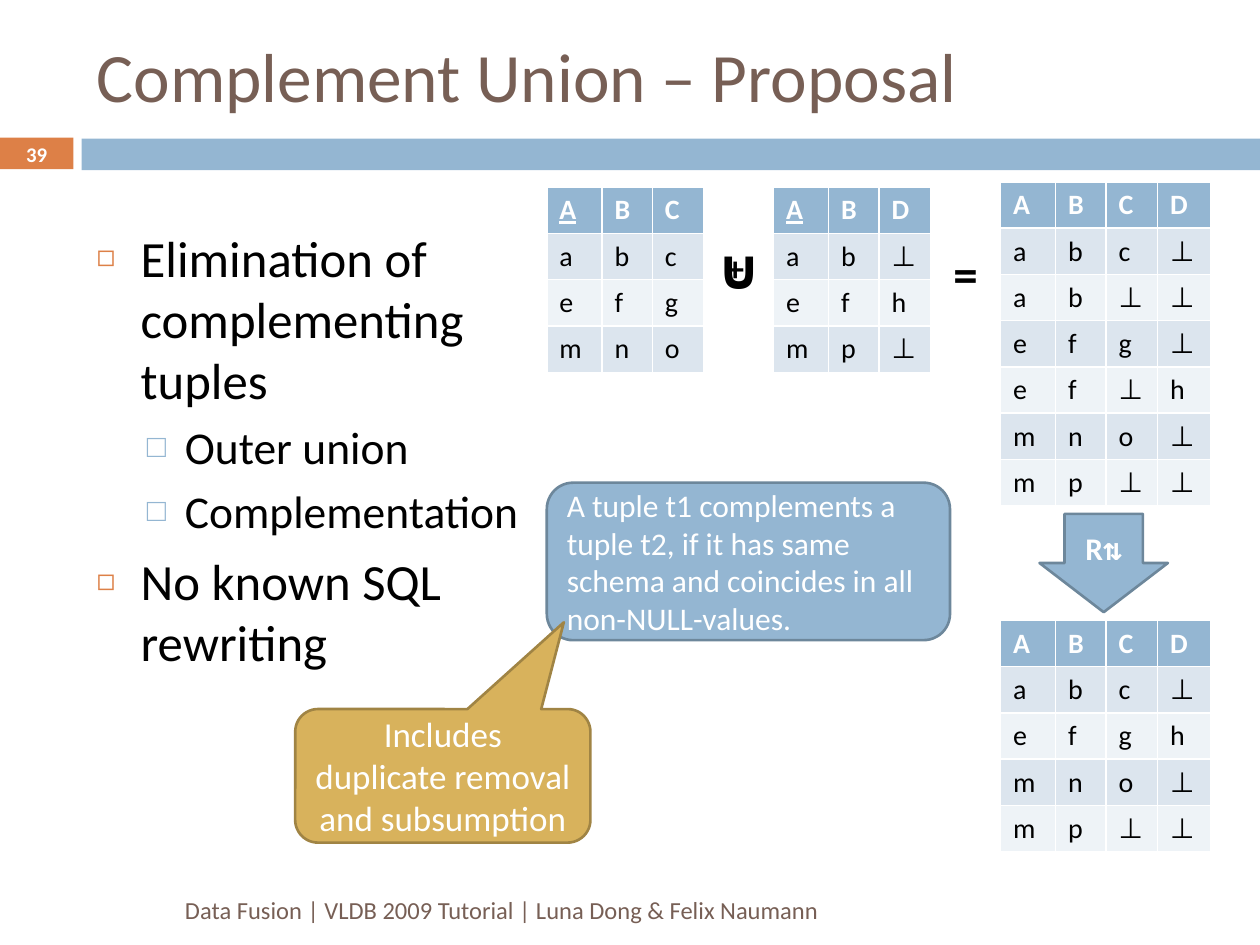
from dataclasses import dataclass

from lxml import etree
from pptx import Presentation
from pptx.dml.color import RGBColor
from pptx.enum.shapes import MSO_SHAPE
from pptx.enum.text import MSO_ANCHOR, MSO_AUTO_SIZE, PP_ALIGN
from pptx.oxml.ns import qn
from pptx.util import Pt

RECT, ROUND = MSO_SHAPE.RECTANGLE, MSO_SHAPE.ROUNDED_RECTANGLE
ARROW, BUBBLE = MSO_SHAPE.DOWN_ARROW, MSO_SHAPE.ROUNDED_RECTANGULAR_CALLOUT
LEFT, MID, RIGHT = PP_ALIGN.LEFT, PP_ALIGN.CENTER, PP_ALIGN.RIGHT
TOP, CENTER = MSO_ANCHOR.TOP, MSO_ANCHOR.MIDDLE
NO_FIT = MSO_AUTO_SIZE.NONE


@dataclass(frozen=True)
class Theme:
    font: str = "Calibri"
    mono: str = "Courier New"
    # Colours
    brown: str = "775F55"
    orange: str = "DD8047"
    blue: str = "94B6D2"
    navy: str = "6D879B"
    gold: str = "D8B25C"
    bronze: str = "A08444"
    bands: tuple = ("DCE5EE", "EEF3F7")
    white: str = "FFFFFF"
    black: str = "000000"
    # Type sizes
    title: float = 39.6
    list: tuple = (29, 26)
    union: float = 32
    equal: float = 28
    plus: float = 20
    call: float = 20
    note: float = 18
    cell: float = 16
    foot: float = 14
    page: float = 11.9


THEME = Theme()


def write(par, text, font=THEME.font, size=THEME.cell, color=THEME.black,
          bold=False, line=False, align=LEFT):
    """Add one styled run to a paragraph."""
    par.alignment = align
    run = par.add_run()
    run.text = text
    face = run.font
    face.name, face.size, face.bold, face.underline = font, Pt(size), bold, line
    face.color.rgb = RGBColor.from_string(color)


def paint(fill, color):
    fill.solid()
    fill.fore_color.rgb = RGBColor.from_string(color)


def place(shape, box):
    shape.left, shape.top, shape.width, shape.height = map(Pt, box)


class Page:
    def __init__(self, slide, theme):
        self.slide, self.theme = slide, theme
        self.shapes = slide.shapes

    def title(self, box, text):
        shape = self.shapes.title
        place(shape, box)
        shape.text_frame.auto_size = NO_FIT
        shape.text_frame.vertical_anchor = CENTER
        write(shape.text_frame.paragraphs[0], text,
              size=self.theme.title, color=self.theme.brown)

    def list(self, box, items):
        look = self.theme
        # Per level: mark, colour, mark size, indent, hang, space before
        kinds = (("◻", look.orange, 60, 25.2, 25.2, 7),
                 ("□", look.blue, 70, 50.4, 21.6, 5.5))
        shape = self.slide.placeholders[1]
        place(shape, box)
        frame = shape.text_frame
        frame.auto_size = NO_FIT
        for i, (level, text) in enumerate(items):
            par = frame.add_paragraph() if i else frame.paragraphs[0]
            mark, color, scale, left, hang, gap = kinds[level]
            par.level, par.space_before = level, Pt(gap)
            write(par, text, size=look.list[level])
            props = par._p.get_or_add_pPr()
            props.set("marL", str(Pt(left)))
            props.set("indent", str(-Pt(hang)))
            tint = etree.SubElement(props, qn("a:buClr"))
            etree.SubElement(tint, qn("a:srgbClr"), val=color)
            etree.SubElement(props, qn("a:buSzPct"), val=str(scale * 1000))
            etree.SubElement(props, qn("a:buChar"), char=mark)

    def label(self, box, text, home=None, wrap=False, anchor=TOP, **form):
        shape = (home or self.shapes).add_textbox(*map(Pt, box))
        frame = shape.text_frame
        frame.word_wrap, frame.vertical_anchor = wrap, anchor
        write(frame.paragraphs[0], text, **form)

    def shape(self, kind, box, fill, edge=None, adjust=()):
        shape = self.shapes.add_shape(kind, *map(Pt, box))
        shape.shadow.inherit = False
        paint(shape.fill, fill)
        if edge:
            shape.line.color.rgb = RGBColor.from_string(edge)
            shape.line.width = Pt(1.5)
        else:
            shape.line.fill.background()
        for i, value in enumerate(adjust):
            shape.adjustments[i] = value
        frame = shape.text_frame
        frame.word_wrap, frame.vertical_anchor = True, CENTER
        return frame.paragraphs[0]

    def table(self, left, top, high, rows, key=False):
        look = self.theme
        wide = (31.5, 28.8, 29.5, 30.2)[:len(rows[0])]
        box = (left, top, sum(wide), high)
        grid = self.shapes.add_table(len(rows), len(wide), *map(Pt, box)).table
        for col, size in zip(grid.columns, wide):
            col.width = Pt(size)
        for r, row in enumerate(rows):
            grid.rows[r].height = Pt(high / len(rows))
            head = r == 0
            for c, text in enumerate(row):
                cell = grid.cell(r, c)
                paint(cell.fill, look.blue if head else look.bands[(r - 1) % 2])
                write(cell.text_frame.paragraphs[0], text, bold=head,
                      color=look.white if head else look.black,
                      line=key and head and c == 0)


def main():
    deck = Presentation()
    deck.slide_width, deck.slide_height = Pt(720), Pt(540)
    look = THEME
    page = Page(deck.slides.add_slide(deck.slide_layouts[1]), look)

    # Header band, title and footer
    page.shape(RECT, (0, 78.7, 42, 18), look.orange)
    page.shape(RECT, (46.6, 79.2, 673.4, 18), look.blue)
    page.title((48, 18, 642, 50), "Complement Union – Proposal")
    page.label((48, 505.5, 427, 28.8),
               "Data Fusion | VLDB 2009 Tutorial | Luna Dong & Felix Naumann",
               wrap=True, anchor=CENTER, size=look.foot, color=look.brown,
               align=RIGHT)
    page.label((0, 78.7, 42, 19.4), "39", wrap=True, anchor=CENTER,
               size=look.page, color=look.white, bold=True, align=MID)

    # Main points
    page.list((48, 126, 261.5, 354), (
        (0, "Elimination of complementing tuples"),
        (1, "Outer union"),
        (1, "Complementation"),
        (0, "No known SQL rewriting")))

    # Source tables and their union
    page.table(312.5, 106.8, 106, ("ABC", "abc", "efg", "mno"), key=True)
    page.table(442, 106.8, 106, ("ABD", "ab⊥", "efh", "mp⊥"), key=True)
    page.table(571.7, 103.9, 185.3, (
        "ABCD", "abc⊥", "ab⊥⊥", "efg⊥", "ef⊥h", "mno⊥", "mp⊥⊥"))

    # Operators
    sign = page.shapes.add_group_shape().shapes
    page.label((402.5, 129.6, 39.6, 46), "∪", home=sign,
               size=look.union, bold=True)
    page.label((408.2, 137.5, 28, 31.5), "+", home=sign,
               size=look.plus, bold=True)
    page.label((537.8, 135.4, 33, 41), "=", size=look.equal, bold=True)

    # Reduction step and its result
    par = page.shape(ARROW, (594, 293.6, 73.4, 56.2), look.blue, look.navy,
                     (0.61, 0.5))
    for text, font in (("R", look.font), ("⇅", look.mono)):
        write(par, text, font=font, size=look.note, color=look.white,
              bold=True, align=MID)
    page.table(571.7, 354.5, 131.8, ("ABCD", "abc⊥", "efgh", "mno⊥", "mp⊥⊥"))

    # Remarks
    par = page.shape(ROUND, (312.5, 275.8, 230.4, 90), look.blue, look.navy)
    write(par, "A tuple t1 complements a tuple t2, if it has same schema "
          "and coincides in all non-NULL-values.",
          size=look.note, color=look.white)
    par = page.shape(BUBBLE, (168.7, 405.2, 168.7, 76.3), look.gold,
                     look.bronze, (0.41, -1.15, 0.17))
    write(par, "Includes duplicate removal and subsumption",
          size=look.call, color=look.white, align=MID)

    deck.save("out.pptx")


if __name__ == "__main__":
    main()
